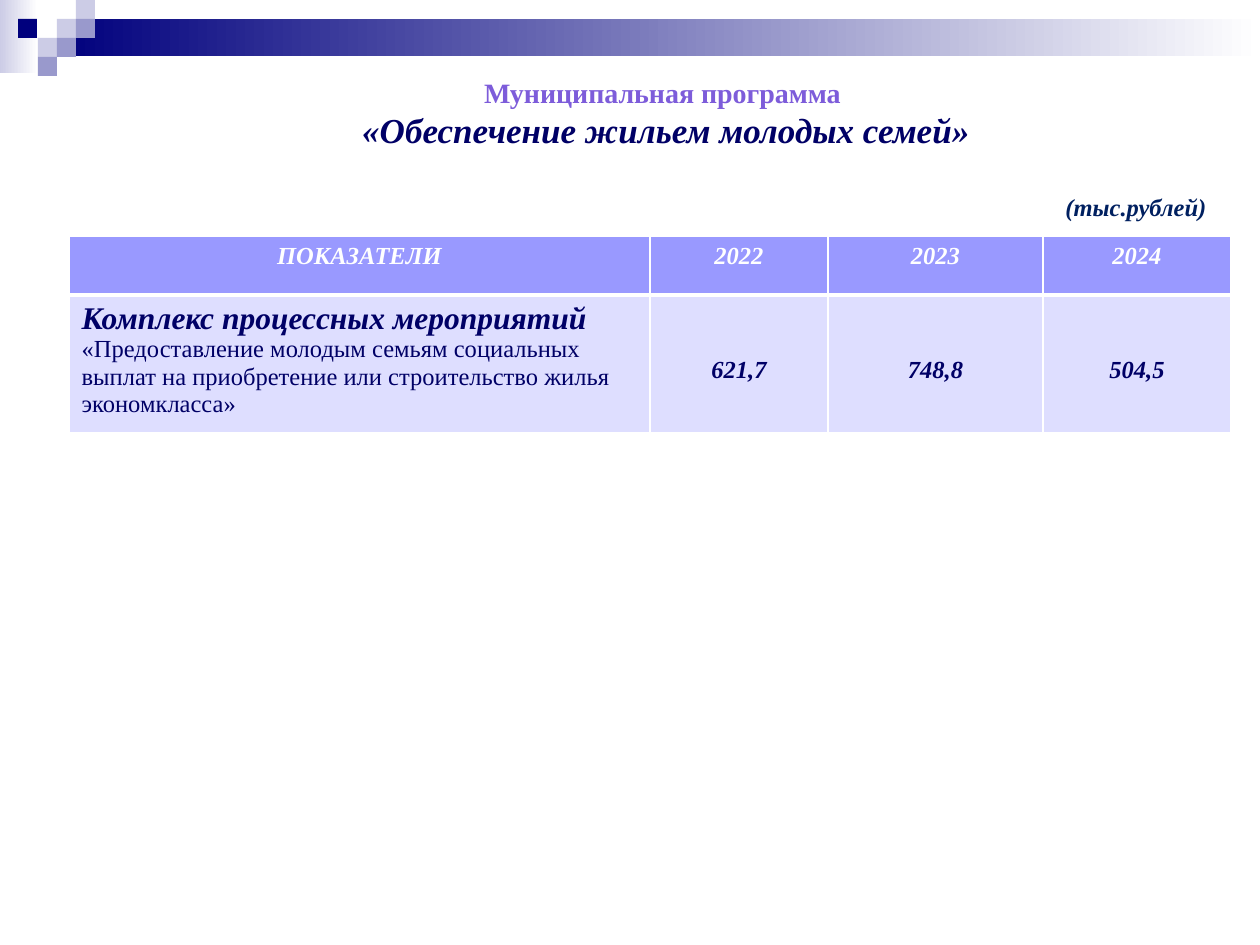
import pptx
import pptx.dml.color
import pptx.enum.shapes
import pptx.enum.text
import pptx.oxml
import pptx.oxml.ns
import pptx.util

RGB = pptx.dml.color.RGBColor
Align = pptx.enum.text.PP_ALIGN
SCALE = pptx.util.Inches(1) / 126

WHITE = RGB(0xFF, 0xFF, 0xFF)
NAVY = RGB(0x00, 0x00, 0x7D)
LAVENDER = RGB(0xCC, 0xCC, 0xE6)
BLUE_GREY = RGB(0x99, 0x99, 0xCC)
VIOLET = RGB(0x7D, 0x5C, 0xDA)
INK = RGB(0x00, 0x00, 0x66)
UNITS_INK = RGB(0x00, 0x20, 0x60)
HEADER_FILL = RGB(0x99, 0x99, 0xFF)
BODY_FILL = RGB(0xDE, 0xDE, 0xFF)

FONT = "Times New Roman"
SQUARE = 19
SQUARES = [
    (57, 19, LAVENDER), (76, 0, LAVENDER), (76, 19, BLUE_GREY),
    (38, 38, LAVENDER), (18, 19, NAVY), (57, 38, BLUE_GREY),
    (38, 57, BLUE_GREY),
]
COLUMN_WIDTHS = [581, 178, 215, 188]
ROW_HEIGHTS = [59, 138]
HEADERS = ["ПОКАЗАТЕЛИ", "2022", "2023", "2024"]
VALUES = ["621,7", "748,8", "504,5"]


def px(length):
    return pptx.util.Emu(round(length * SCALE))


def add_span(para, text, size, color, bold=True, italic=True):
    span = para.add_run()
    span.text = text
    formats = {"name": FONT, "size": pptx.util.Pt(size), "bold": bold, "italic": italic}
    for name, value in formats.items():
        setattr(span.font, name, value)
    span.font.color.rgb = color


def add_block(slide, left, top, width, height, *colors):
    """Add a borderless rectangle: one colour is solid, two fade rightwards."""
    block = slide.shapes.add_shape(
        pptx.enum.shapes.MSO_SHAPE.RECTANGLE, px(left), px(top), px(width), px(height))
    block.shadow.inherit = False
    block.line.fill.background()
    if len(colors) == 1:
        block.fill.solid()
        block.fill.fore_color.rgb = colors[0]
        return
    block.fill.gradient()
    block.fill.gradient_angle = 0
    for position, (stop, color) in enumerate(zip(block.fill.gradient_stops, colors)):
        stop.position = position
        stop.color.rgb = color


def add_decoration(slide):
    add_block(slide, 0, 0, 38, 73, LAVENDER, WHITE)
    add_block(slide, 57, 19, 1203, 37, NAVY, WHITE)
    for left, top, color in SQUARES:
        add_block(slide, left, top, SQUARE, SQUARE, color)


def format_title(slide):
    title = slide.shapes.title
    place = {"left": px(196), "top": px(69), "width": px(940), "height": px(89)}
    for name, value in place.items():
        setattr(title, name, value)
    frame = title.text_frame
    frame.word_wrap = True
    frame.auto_size = pptx.enum.text.MSO_AUTO_SIZE.NONE
    frame.vertical_anchor = pptx.enum.text.MSO_ANCHOR.TOP
    first, second = frame.paragraphs[0], frame.add_paragraph()
    for para in (first, second):
        para.alignment = Align.CENTER
        para.space_before = pptx.util.Pt(0)
    add_span(first, "Муниципальная программа ", 16, VIOLET, italic=False)
    add_span(second, "«Обеспечение жильем молодых семей»", 20, INK)


def add_units(slide):
    box = slide.shapes.add_textbox(px(1053), px(186), px(168), px(43))
    box.text_frame.word_wrap = False
    add_span(box.text_frame.paragraphs[0], "(тыс.рублей)", 14, UNITS_INK)


def format_cell(cell, fill, bottom_width):
    cell.fill.solid()
    cell.fill.fore_color.rgb = fill
    properties = cell._tc.get_or_add_tcPr()
    widths = {"lnL": 1, "lnR": 1, "lnT": 1, "lnB": bottom_width}
    for index, (side, width) in enumerate(widths.items()):
        properties.insert(index, pptx.oxml.parse_xml(
            f'<a:{side} {pptx.oxml.ns.nsdecls("a")} w="{pptx.util.Pt(width)}">'
            f'<a:solidFill><a:srgbClr val="{WHITE}"/></a:solidFill></a:{side}>'))


def add_indicators(slide):
    table = slide.shapes.add_table(
        len(ROW_HEIGHTS), len(COLUMN_WIDTHS), px(69), px(236),
        px(sum(COLUMN_WIDTHS)), px(sum(ROW_HEIGHTS))).table
    for column, width in zip(table.columns, COLUMN_WIDTHS):
        column.width = px(width)
    for row, height in zip(table.rows, ROW_HEIGHTS):
        row.height = px(height)

    for column, text in enumerate(HEADERS):
        cell = table.cell(0, column)
        format_cell(cell, HEADER_FILL, 3)
        para = cell.text_frame.paragraphs[0]
        para.alignment = Align.CENTER
        add_span(para, text, 14, WHITE)

    label = table.cell(1, 0)
    format_cell(label, BODY_FILL, 1)
    para = label.text_frame.paragraphs[0]
    add_span(para, "Комплекс процессных мероприятий ", 18, INK)
    add_span(para, "«Предоставление молодым семьям социальных выплат на приобретение "
             "или строительство жилья экономкласса»", 14, INK, bold=False, italic=False)

    for column, text in enumerate(VALUES, start=1):
        cell = table.cell(1, column)
        format_cell(cell, BODY_FILL, 1)
        cell.margin_top = px(62)
        para = cell.text_frame.paragraphs[0]
        para.alignment = Align.CENTER
        add_span(para, text, 14, INK)


def main():
    deck = pptx.Presentation()
    deck.slide_width, deck.slide_height = px(1260), px(945)
    slide = deck.slides.add_slide(deck.slide_layouts[5])
    add_decoration(slide)
    format_title(slide)
    add_indicators(slide)
    add_units(slide)
    deck.save("out.pptx")


if __name__ == "__main__":
    main()
